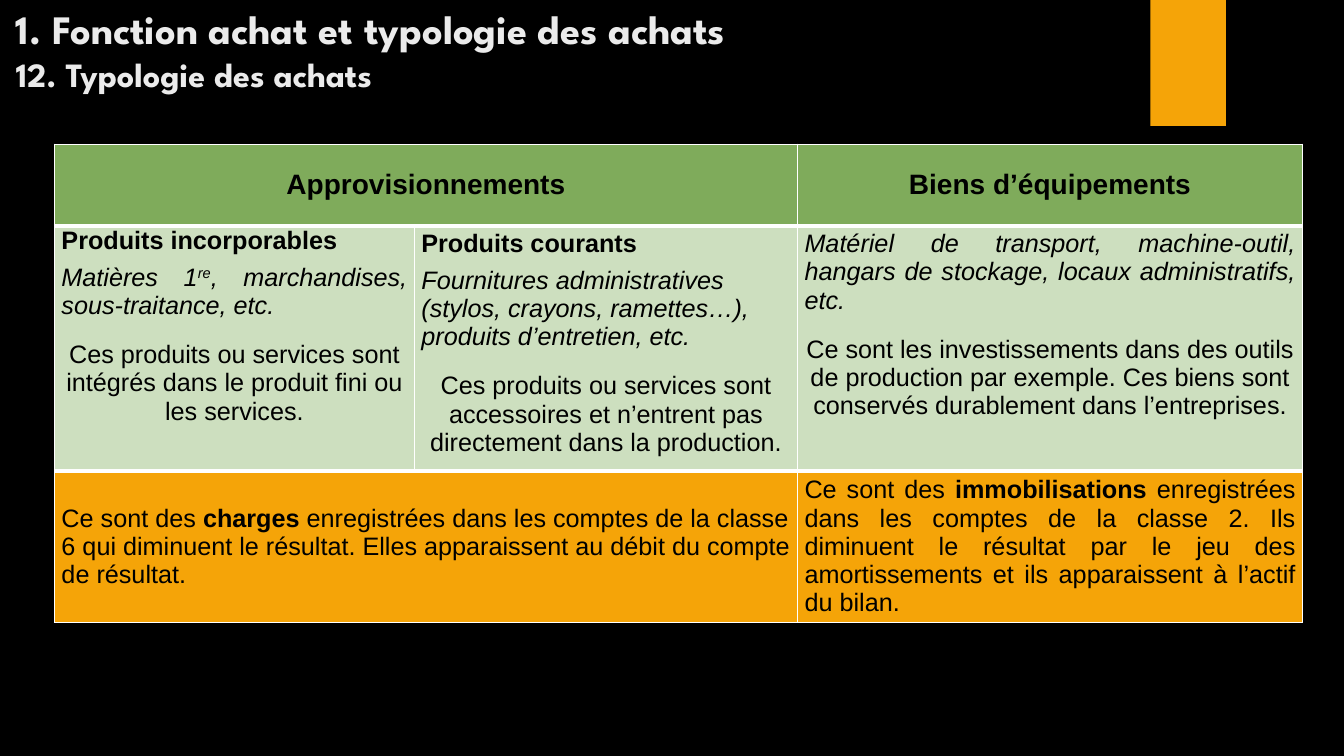
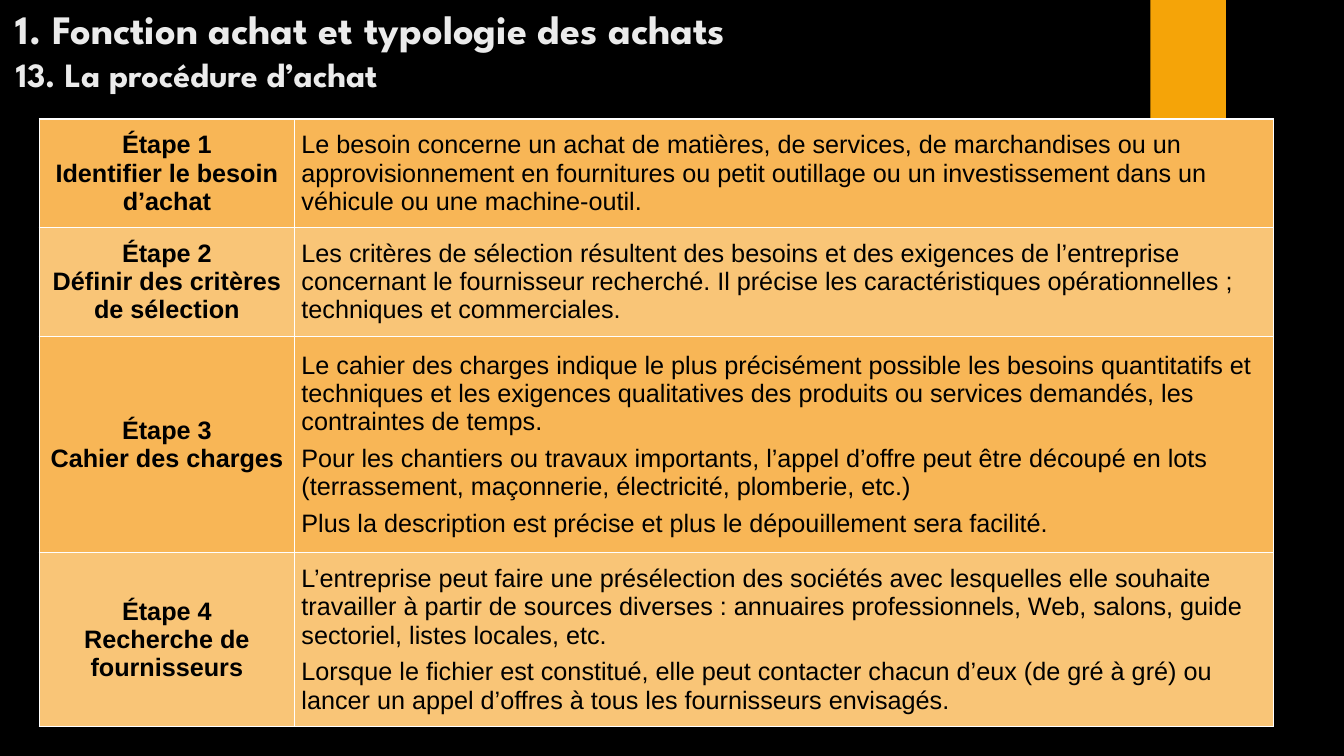
from lxml.etree import SubElement
from pptx import Presentation
from pptx.dml.color import RGBColor
from pptx.enum.shapes import MSO_SHAPE
from pptx.enum.text import MSO_ANCHOR, PP_ALIGN
from pptx.oxml.ns import qn
from pptx.util import Inches, Pt

BLACK = RGBColor(0x00, 0x00, 0x00)
WHITE = RGBColor(0xFF, 0xFF, 0xFF)
PALE = RGBColor(0xEB, 0xEB, 0xEB)
ORANGE = RGBColor(0xF5, 0xA4, 0x08)
AMBER = RGBColor(0xF8, 0xB6, 0x56)
SAND = RGBColor(0xF9, 0xC5, 0x77)
GREEN = RGBColor(0x7F, 0xAB, 0x5B)
MINT = RGBColor(0xCD, 0xDF, 0xBF)

LEFT, MID, FULL = PP_ALIGN.LEFT, PP_ALIGN.CENTER, PP_ALIGN.JUSTIFY
TITLE_FONT, BODY_FONT = "League Spartan", "Arial"
CHAPTER = "1. Fonction achat et typologie des achats"
BAND_BOX = (11.41, 0, 0.75, 1.25)
TITLE_BOX = (0.06, 0, 9.65, 0.98)
TYPE_BOX = (0.54, 1.43, 12.38, 4.54)
STEP_BOX = (0.39, 1.18, 12.24, 6.03)

STEPS = [
    ("Étape 1", "Identifier le besoin d’achat", [
        "Le besoin concerne un achat de matières, de services, de marchandises ou un "
        "approvisionnement en fournitures ou petit outillage ou un investissement dans un "
        "véhicule ou une machine-outil."]),
    ("Étape 2", "Définir des critères de sélection", [
        "Les critères de sélection résultent des besoins et des exigences de l’entreprise "
        "concernant le fournisseur recherché. Il précise les caractéristiques "
        "opérationnelles ; techniques et commerciales."]),
    ("Étape 3", "Cahier des charges", [
        "Le cahier des charges indique le plus précisément possible les besoins quantitatifs "
        "et techniques et les exigences qualitatives des produits ou services demandés, les "
        "contraintes de temps.",
        "Pour les chantiers ou travaux importants, l’appel d’offre peut être découpé en lots "
        "(terrassement, maçonnerie, électricité, plomberie, etc.)",
        "Plus la description est précise et plus le dépouillement sera facilité."]),
    ("Étape 4", "Recherche de fournisseurs", [
        "L’entreprise peut faire une présélection des sociétés avec lesquelles elle souhaite "
        "travailler à partir de sources diverses : annuaires professionnels, Web, salons, "
        "guide sectoriel, listes locales, etc.",
        "Lorsque le fichier est constitué, elle peut contacter chacun d’eux (de gré à gré) ou "
        "lancer un appel d’offres à tous les fournisseurs envisagés."]),
]


def add_run(para, text, size, font=BODY_FONT, color=BLACK, style=""):
    """Add one run; style letters are b bold, i italic, s superscript."""
    run = para.add_run()
    run.text = text
    run.font.size, run.font.name = Pt(size), font
    run.font.bold, run.font.italic = "b" in style, "i" in style
    run.font.color.rgb = color
    if "s" in style:
        run._r.get_or_add_rPr().set("baseline", "30000")


def add_edge(cell, top=1, base=1):
    """Draw white borders with the given top and base widths."""
    props = cell._tc.get_or_add_tcPr()
    for side, width in (("L", 1), ("R", 1), ("T", top), ("B", base)):
        line = SubElement(props, qn(f"a:ln{side}"), w=str(Pt(width)))
        fill = SubElement(line, qn("a:solidFill"))
        SubElement(fill, qn("a:srgbClr"), val=str(WHITE))


def fill_cell(cell, paras, size=18, pad=None):
    """Write (align, gap, runs) paragraphs, centred unless a top pad is given."""
    cell.margin_left = cell.margin_right = Inches(0.07)
    cell.margin_top, cell.margin_bottom = Inches(pad or 0), 0
    cell.vertical_anchor = MSO_ANCHOR.MIDDLE if pad is None else MSO_ANCHOR.TOP
    frame = cell.text_frame
    for num, (align, gap, runs) in enumerate(paras):
        para = frame.add_paragraph() if num else frame.paragraphs[0]
        para.alignment = align
        para.space_before = Pt(gap)
        for text, style in runs:
            add_run(para, text, size, style=style)


def add_grid(slide, box, cols, rows, tints, heavy=()):
    """Add a plain table, its tracks shared over the box, with thick lines below heavy rows."""
    table = slide.shapes.add_table(len(rows), len(cols), *map(Inches, box)).table
    table.first_row = table.horz_banding = False
    for col, part in zip(table.columns, cols):
        col.width = Inches(box[2] * part / sum(cols))
    for num, (row, part) in enumerate(zip(table.rows, rows)):
        row.height = Inches(box[3] * part / sum(rows))
        for cell in row.cells:
            add_edge(cell, 3 if num - 1 in heavy else 1, 3 if num in heavy else 1)
            cell.fill.solid()
            cell.fill.fore_color.rgb = tints[num % len(tints)]
    return table


def add_page(deck, topic):
    """Add a slide with the orange band and the two-line title."""
    slide = deck.slides.add_slide(deck.slide_layouts[6])
    band = slide.shapes.add_shape(MSO_SHAPE.RECTANGLE, *map(Inches, BAND_BOX))
    band.shadow.inherit = False
    band.fill.solid()
    band.fill.fore_color.rgb = ORANGE
    band.line.fill.background()
    frame = slide.shapes.add_textbox(*map(Inches, TITLE_BOX)).text_frame
    frame.word_wrap = True
    frame.vertical_anchor = MSO_ANCHOR.BOTTOM
    para = frame.paragraphs[0]
    add_run(para, CHAPTER, 28.8, TITLE_FONT, PALE, "b")
    para.add_line_break()
    add_run(para, topic, 24.3, TITLE_FONT, PALE, "b")
    return slide


def add_types(slide, box):
    """Compare supplies with equipment."""
    table = add_grid(slide, box, (3.57, 3.8, 5.01), (0.81, 2.33, 1.4),
                     (GREEN, MINT, ORANGE), heavy=(0, 1))
    for row in (0, 2):
        table.cell(row, 0).merge(table.cell(row, 1))
    for col, head in ((0, "Approvisionnements"), (2, "Biens d’équipements")):
        fill_cell(table.cell(0, col), [(MID, 0, [(head, "b")])], size=20)
    fill_cell(table.cell(1, 0), [
        (FULL, 0, [("Produits incorporables", "b")]),
        (FULL, 6, [("Matières 1", "i"), ("re", "is"),
                   (", marchandises, sous-traitance, etc.", "i")]),
        (MID, 15, [("Ces produits ou services sont intégrés dans le produit fini "
                    "ou les services.", "")]),
    ], pad=0.01)
    fill_cell(table.cell(1, 1), [
        (LEFT, 0, [("Produits courants", "b")]),
        (LEFT, 6, [("Fournitures administratives (stylos, crayons, ramettes…), "
                    "produits d’entretien, etc.", "i")]),
        (MID, 15, [("Ces produits ou services sont accessoires et n’entrent pas "
                    "directement dans la production.", "")]),
    ], pad=0.04)
    fill_cell(table.cell(1, 2), [
        (FULL, 0, [("Matériel de transport, machine-outil, hangars de stockage, "
                    "locaux administratifs, etc.", "i")]),
        (MID, 15, [("Ce sont les investissements dans des outils de production par exemple. "
                    "Ces biens sont conservés durablement dans l’entreprises.", "")]),
    ], pad=0.04)
    fill_cell(table.cell(2, 0), [(LEFT, 0, [
        ("Ce sont des ", ""), ("charges", "b"),
        (" enregistrées dans les comptes de la classe 6 qui diminuent le résultat. "
         "Elles apparaissent au débit du compte de résultat.", "")])])
    fill_cell(table.cell(2, 2), [(FULL, 0, [
        ("Ce sont des ", ""), ("immobilisations", "b"),
        (" enregistrées dans les comptes de la classe 2. Ils diminuent le résultat par le jeu "
         "des amortissements et ils apparaissent à l’actif du bilan.", "")])])


def add_steps(slide, box):
    """List the steps of the buying process."""
    table = add_grid(slide, box, (2.53, 9.71), (1.08, 1.08, 2.15, 1.73), (AMBER, SAND))
    for row, (step, name, notes) in enumerate(STEPS):
        fill_cell(table.cell(row, 0), [(MID, 0, [(text, "b")]) for text in (step, name)])
        fill_cell(table.cell(row, 1), [(LEFT, 6 if num else 0, [(note, "")])
                                       for num, note in enumerate(notes)])


def main():
    """Build and save the deck."""
    deck = Presentation()
    deck.slide_width, deck.slide_height = Inches(13.33), Inches(7.5)
    ground = deck.slide_master.background.fill
    ground.solid()
    ground.fore_color.rgb = BLACK
    add_types(add_page(deck, "12. Typologie des achats"), TYPE_BOX)
    add_steps(add_page(deck, "13. La procédure d’achat"), STEP_BOX)
    deck.save("out.pptx")


if __name__ == "__main__":
    main()
